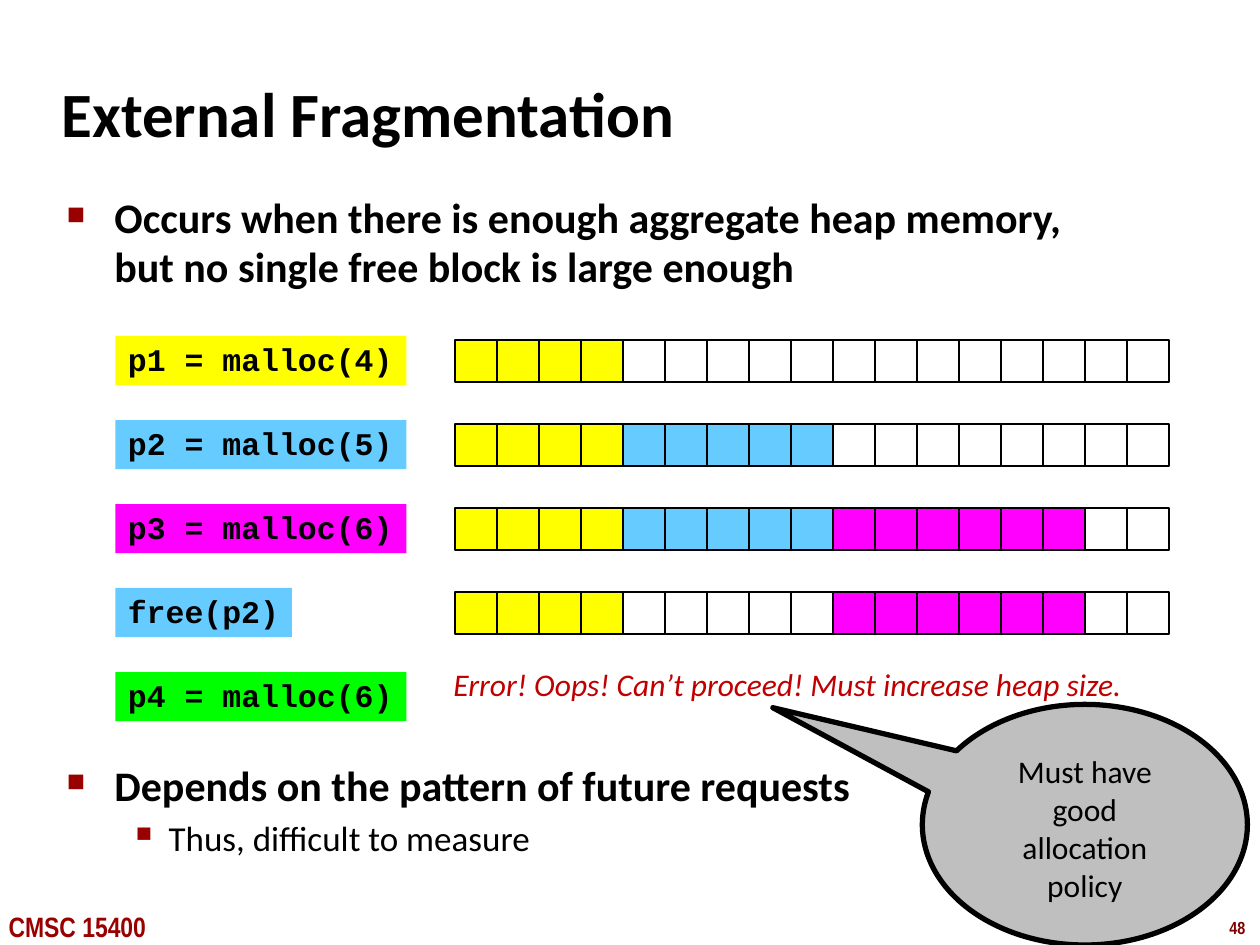
from lxml import etree
from pptx import Presentation
from pptx.dml.color import RGBColor
from pptx.enum.shapes import MSO_SHAPE
from pptx.enum.text import MSO_ANCHOR, PP_ALIGN
from pptx.oxml.ns import qn
from pptx.util import Inches, Pt

RECT, BUBBLE = MSO_SHAPE.RECTANGLE, MSO_SHAPE.OVAL_CALLOUT
MIDDLE, CENTER = MSO_ANCHOR.MIDDLE, PP_ALIGN.CENTER

# Grid of 30 columns by 22.5 rows; one heap cell is one unit
COLS, ROWS, UNIT = 30, 22.5, Inches(1) / 3

YELLOW, BLUE, PINK, GREEN = "FFFF00", "66CCFF", "FF00FF", "00FF00"
WHITE, BLACK, GRAY, RED = "FFFFFF", "000000", "BFBFBF", "990000"

HEAD = dict(name="Calibri", size=Pt(36), bold=True)
MAIN = dict(name="Calibri", size=Pt(24), bold=True)
SUB = dict(name="Calibri", size=Pt(20))
CODE = dict(name="Courier New", size=Pt(18), bold=True)
NOTE = dict(name="Calibri", size=Pt(18))
ERROR = dict(NOTE, italic=True)
COURSE = dict(name="Arial Narrow", size=Pt(16), bold=True)
PAGE = dict(COURSE, size=Pt(10))

CELLS = 17
STEPS = [  # code, tag colour, tag width, heap as runs of (colour, count)
    ("p1 = malloc(4)", YELLOW, 6.93, [(YELLOW, 4), (WHITE, 13)]),
    ("p2 = malloc(5)", BLUE, 6.93, [(YELLOW, 4), (BLUE, 5), (WHITE, 8)]),
    ("p3 = malloc(6)", PINK, 6.93,
     [(YELLOW, 4), (BLUE, 5), (PINK, 6), (WHITE, 2)]),
    ("free(p2)", BLUE, 4.2,
     [(YELLOW, 4), (WHITE, 5), (PINK, 6), (WHITE, 2)]),
    ("p4 = malloc(6)", GREEN, 6.93, []),
]
POINTS = [  # text, format, margin, hang, space before, bullet, bullet size
    ("Occurs when there is enough aggregate heap memory, "
     "but no single free block is large enough", MAIN, 0.38, 0.38, 0, "■", 60),
    ("Depends on the pattern of future requests",
     MAIN, 0.38, 0.38, 268, "■", 60),
    ("Thus, difficult to measure", SUB, 0.81, 0.31, 4, "▪", 110),
]


def color(code):
    return RGBColor.from_string(code)


def scale(box):
    return [round(n * UNIT) for n in box]


def write(para, text, style, ink=BLACK):
    run = para.add_run()
    run.text = text
    for key, value in style.items():
        setattr(run.font, key, value)
    run.font.color.rgb = color(ink)


def label(slide, box, text, style, ink=BLACK, wrap=False):
    frame = slide.shapes.add_textbox(*scale(box)).text_frame
    frame.word_wrap = wrap
    write(frame.paragraphs[0], text, style, ink)
    return frame


def block(shapes, kind, box, fill, line=0):
    shape = shapes.add_shape(kind, *scale(box))
    shape.shadow.inherit = False
    shape.fill.solid()
    shape.fill.fore_color.rgb = color(fill)
    if line:
        shape.line.color.rgb = color(BLACK)
        shape.line.width = Pt(line)
    else:
        shape.line.fill.background()
    return shape


def bullet(para, margin, hang, char, size):
    props = para._p.get_or_add_pPr()
    props.set("marL", str(Inches(margin)))
    props.set("indent", str(-Inches(hang)))
    tint = etree.SubElement(props, qn("a:buClr"))
    etree.SubElement(tint, qn("a:srgbClr"), val=RED)
    etree.SubElement(props, qn("a:buSzPct"), val=str(size * 1000))
    etree.SubElement(props, qn("a:buChar"), char=char)


def body(slide, box):
    frame = slide.shapes.add_textbox(*scale(box)).text_frame
    frame.word_wrap = True
    for i, (text, style, margin, hang, gap, char, size) in enumerate(POINTS):
        para = frame.add_paragraph() if i else frame.paragraphs[0]
        bullet(para, margin, hang, char, size)
        para.line_spacing = 0.98
        para.space_before = Pt(gap)
        write(para, text, style)


def tag(slide, box, text, fill):
    frame = block(slide.shapes, RECT, box, fill).text_frame
    frame.word_wrap = False
    para = frame.paragraphs[0]
    para.alignment = PP_ALIGN.LEFT
    para.line_spacing = 0.94
    write(para, text, CODE)


def heap(slide, box, runs):
    left, top, width, height = box
    cell = width / CELLS
    group = slide.shapes.add_group_shape()
    fills = [fill for fill, count in runs for _ in range(count)]
    for i, fill in enumerate(fills):
        block(group.shapes, RECT, (left + i * cell, top, cell, height), fill, 1)


def trace(slide, box):
    left, top, width, height = box
    pitch = height / len(STEPS)
    for i, (code, fill, wide, runs) in enumerate(STEPS):
        row = top + i * pitch
        if runs:
            heap(slide, (left + width - CELLS, row + 0.1, CELLS, 1), runs)
        tag(slide, (left, row, wide, 1.17), code, fill)


def remark(slide, box):
    shape = block(slide.shapes, BUBBLE, box, GRAY, 3)
    shape.adjustments[0], shape.adjustments[1] = -0.96, -0.486
    frame = shape.text_frame
    frame.word_wrap = True
    frame.vertical_anchor = MIDDLE
    frame.margin_bottom = 0
    for i, text in enumerate(["Must have good", "allocation policy"]):
        para = frame.add_paragraph() if i else frame.paragraphs[0]
        para.alignment = CENTER
        write(para, text, NOTE)


def footer(slide, box):
    left, top, width, height = box
    label(slide, (left + width - 1.02, top + 0.18, 1.02, 0.81),
          "48", PAGE, "800000")
    label(slide, (left - 0.09, top, 4.26, height), "CMSC 15400", COURSE, RED)


def main():
    deck = Presentation()
    deck.slide_width, deck.slide_height = scale((COLS, ROWS))
    slide = deck.slides.add_slide(deck.slide_layouts[6])
    footer(slide, (0, 21.51, COLS, 1.11))
    # Title and bullet points
    title = label(slide, (1.17, 1.44, 24.9, 2.49),
                  "External Fragmentation", HEAD, wrap=True)
    title.vertical_anchor = MIDDLE
    body(slide, (1.29, 4.47, 25.92, 16.32))
    # Allocation steps and the failure
    trace(slide, (2.75, 8, 25.08, 10))
    label(slide, (10.5, 15.69, 16.68, 1.2),
          "Error! Oops! Can’t proceed! Must increase heap size.",
          ERROR, "C00000")
    remark(slide, (21.96, 16.77, 7.74, 5.73))
    deck.save("out.pptx")


if __name__ == "__main__":
    main()
